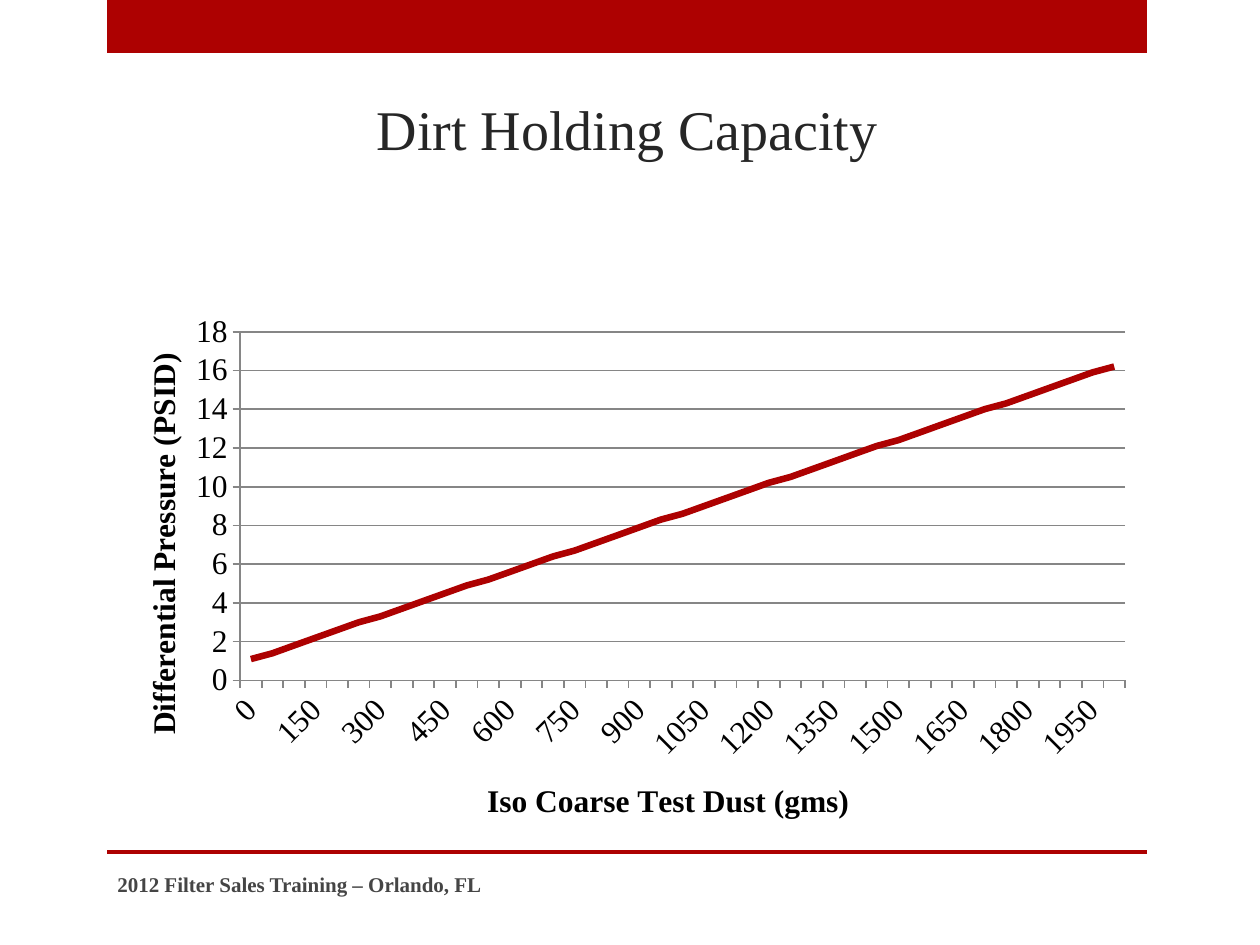
"""Build the dirt holding capacity slide with its pressure line chart."""
from dataclasses import dataclass

from lxml import etree
from pptx import Presentation, util as u
from pptx.chart.data import CategoryChartData
from pptx.dml.color import RGBColor
from pptx.enum import chart as ch, shapes, text
from pptx.oxml.ns import qn

EMU_PER_PX = 914400 / 126
FONT = "Times New Roman"
COLORS = {"red": "AD0101", "title": "262626", "footer": "454545",
          "label": "000000", "axis": "868686"}
DUST_GRAMS = range(0, 2001, 50)
PRESSURES = [
    1.1, 1.4, 1.8, 2.2, 2.6, 3, 3.3, 3.7, 4.1, 4.5, 4.9, 5.2, 5.6, 6,
    6.4, 6.7, 7.1, 7.5, 7.9, 8.3, 8.6, 9, 9.4, 9.8, 10.2, 10.5, 10.9, 11.3,
    11.7, 12.1, 12.4, 12.8, 13.2, 13.6, 14, 14.3, 14.7, 15.1, 15.5, 15.9, 16.2,
]


@dataclass(frozen=True)
class Box:
    left: int
    top: int
    width: int
    height: int

    def emu(self) -> list[u.Emu]:
        return [px(n) for n in (self.left, self.top, self.width, self.height)]


@dataclass(frozen=True)
class AxisStyle:
    title: str
    title_x: float
    title_y: float


BANDS = [Box(107, 0, 1040, 53), Box(107, 850, 1040, 4)]
TITLE = Box(160, 73, 935, 95)
CHART = Box(107, 305, 1040, 535)
FOOTER = Box(105, 859, 577, 51)
DUST_AXIS = AxisStyle("Iso Coarse Test Dust (gms)", 0.36, 0.88)
PRESSURE_AXIS = AxisStyle("Differential Pressure (PSID)", 0.03, 0.08)


def px(n: int) -> u.Emu:
    return u.Emu(round(n * EMU_PER_PX))


def color(name: str) -> RGBColor:
    return RGBColor.from_string(COLORS[name])


def style_font(font, size: int, name: str, bold: bool = False) -> None:
    font.name, font.size, font.bold = FONT, u.Pt(size), bold
    font.color.rgb = color(name)


def style_line(line, name: str, width: float) -> None:
    line.color.rgb = color(name)
    line.width = u.Pt(width)


def draw_band(slide, box: Box) -> None:
    band = slide.shapes.add_shape(shapes.MSO_SHAPE.RECTANGLE, *box.emu())
    band.shadow.inherit = False
    band.fill.solid()
    band.fill.fore_color.rgb = color("red")
    band.line.fill.background()


def write_text(holder, words: str, size: int, name: str, bold: bool,
               align, anchor) -> None:
    frame = holder.text_frame
    frame.word_wrap = True
    frame.auto_size = text.MSO_AUTO_SIZE.NONE
    frame.vertical_anchor = anchor
    frame.text = words
    paragraph = frame.paragraphs[0]
    paragraph.alignment = align
    style_font(paragraph.font, size, name, bold)


def set_layout(parent, index: int, **values) -> None:
    for old in parent.findall(qn("c:layout")):
        parent.remove(old)
    layout = etree.Element(qn("c:layout"))
    manual = etree.SubElement(layout, qn("c:manualLayout"))
    for tag, value in values.items():
        etree.SubElement(manual, qn(f"c:{tag}")).set("val", str(value))
    parent.insert(index, layout)


def style_axis(axis, style: AxisStyle) -> None:
    axis.major_tick_mark = ch.XL_TICK_MARK.OUTSIDE
    axis.minor_tick_mark = ch.XL_TICK_MARK.NONE
    style_font(axis.tick_labels.font, 18, "label")
    style_line(axis.format.line, "axis", 1)
    frame = axis.axis_title.text_frame
    frame.text = style.title
    style_font(frame.paragraphs[0].font, 18, "label", True)
    set_layout(axis.axis_title._element, 1, xMode="edge", yMode="edge",
               x=style.title_x, y=style.title_y)


def draw_chart(slide) -> None:
    data = CategoryChartData(number_format="0.0")
    data.categories = [str(grams) for grams in DUST_GRAMS]
    data.add_series("Series 1", PRESSURES)
    chart = slide.shapes.add_chart(
        ch.XL_CHART_TYPE.LINE, *CHART.emu(), data).chart
    chart.has_legend = chart.has_title = False
    style_font(chart.font, 10, "label")
    chart.plots[0].vary_by_categories = False

    pressure = chart.plots[0].series[0]
    pressure.smooth = False
    pressure.marker.style = ch.XL_MARKER_STYLE.NONE
    style_line(pressure.format.line, "red", 3.75)

    dust_axis, pressure_axis = chart.category_axis, chart.value_axis
    style_axis(dust_axis, DUST_AXIS)
    style_axis(pressure_axis, PRESSURE_AXIS)
    pressure_axis.minimum_scale, pressure_axis.maximum_scale = 0, 18
    pressure_axis.major_unit = 2
    pressure_axis.tick_labels.number_format = "0"
    pressure_axis.tick_labels.number_format_is_linked = False
    pressure_axis.has_major_gridlines = True
    style_line(pressure_axis.major_gridlines.format.line, "axis", 1)
    title_body = pressure_axis.axis_title.text_frame._txBody
    title_body.find(qn("a:bodyPr")).set("rot", "-5400000")

    dust_xml = dust_axis._element
    dust_xml.find(f"{qn('c:txPr')}/{qn('a:bodyPr')}").set("rot", "-2700000")
    skip = etree.Element(qn("c:tickLblSkip"), val="3")
    dust_xml.find(qn("c:noMultiLvlLbl")).addprevious(skip)
    plot_area = chart._chartSpace.find(f"{qn('c:chart')}/{qn('c:plotArea')}")
    set_layout(plot_area, 0, layoutTarget="inner", xMode="edge", yMode="edge",
               x=0.128, y=0.05, w=0.851, h=0.652)


def main() -> None:
    deck = Presentation()
    deck.slide_width, deck.slide_height = px(1260), px(945)
    slide = deck.slides.add_slide(deck.slide_layouts[5])
    for band in BANDS:
        draw_band(slide, band)

    footer = slide.shapes.add_textbox(*FOOTER.emu())
    write_text(footer, "2012 Filter Sales Training – Orlando, FL", 12, "footer",
               True, text.PP_ALIGN.LEFT, text.MSO_ANCHOR.MIDDLE)

    title = slide.shapes.title
    title.left, title.top, title.width, title.height = TITLE.emu()
    write_text(title, "Dirt Holding Capacity", 32, "title", False,
               text.PP_ALIGN.CENTER, text.MSO_ANCHOR.BOTTOM)
    draw_chart(slide)
    deck.save("out.pptx")


if __name__ == "__main__":
    main()
